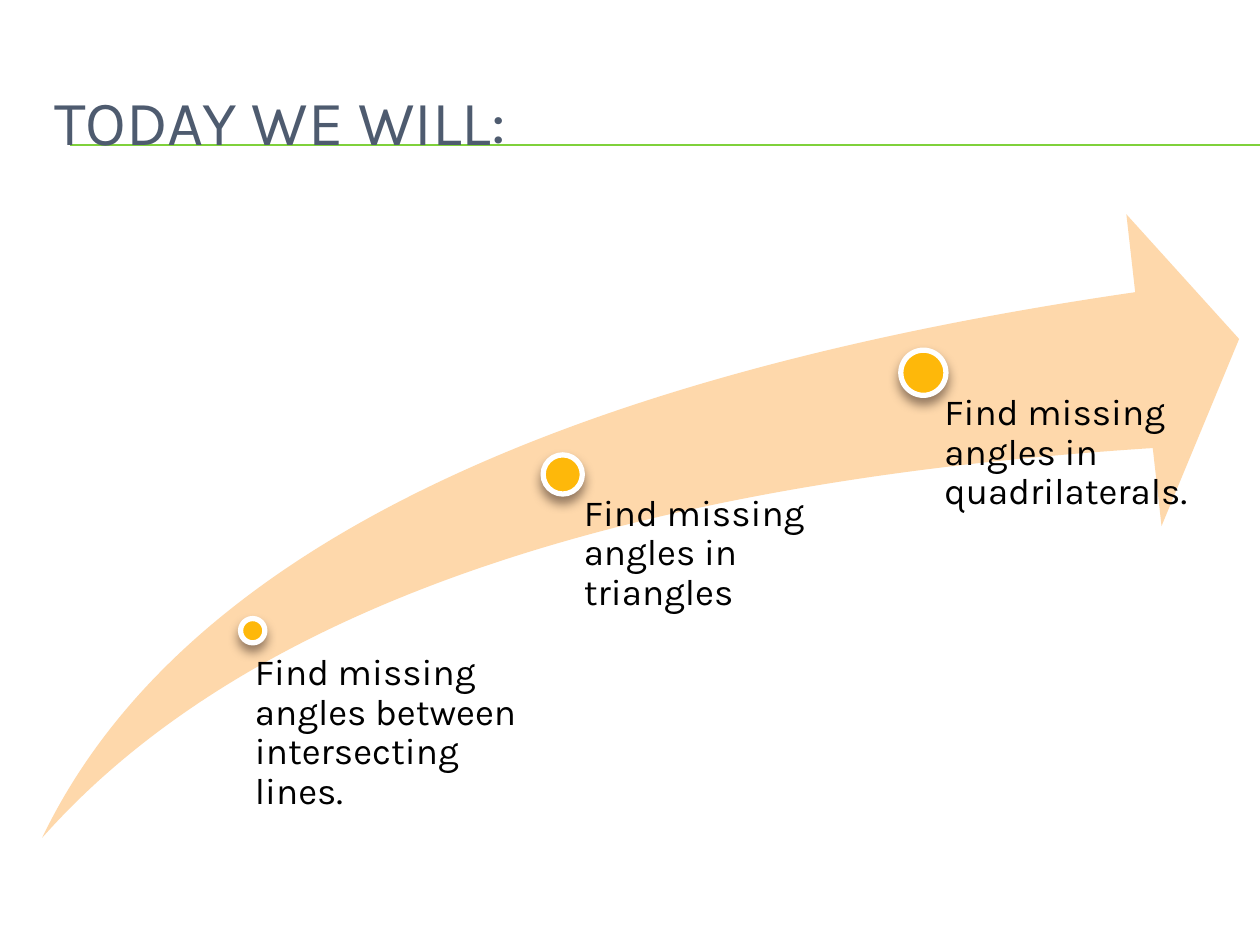
"""Build a lesson goals slide with three steps along a rising arrow."""
from lxml import etree
from pptx import Presentation
from pptx import util as u
from pptx.dml.color import RGBColor
from pptx.enum import shapes, text
from pptx.oxml import parse_xml
from pptx.oxml.ns import nsdecls, qn

SLATE = RGBColor(0x4E, 0x5B, 0x6F)
GREEN = RGBColor(0x7F, 0xD1, 0x3B)
PEACH = RGBColor(0xFE, 0xD8, 0xAB)
AMBER = RGBColor(0xFE, 0xB8, 0x0A)
WHITE = RGBColor(0xFF, 0xFF, 0xFF)
BLACK = RGBColor(0, 0, 0)
BROWN = RGBColor(0x4E, 0x3B, 0x30)

WIDE, HIGH = 25.4, 19.05
TITLE = "TODAY WE WILL:"
RULES = [2.92, 2.94]
STEPS = [
    ("Find missing angles between intersecting lines.",
     (4.73, 12.77, 6.78, 3.15), (4.85, 12.47, 0.49)),
    ("Find missing angles in triangles",
     (11.36, 9.56, 6.05, 3.28), (10.95, 9.17, 0.79)),
    ("Find missing angles in quadrilaterals.",
     (18.63, 7.53, 6.05, 3.28), (18.16, 7.06, 0.91)),
]
SHADE = f"""<a:effectLst {nsdecls("a")}>
<a:outerShdw blurRad="{u.Pt(6)}" dist="{u.Pt(4)}" dir="5400000" rotWithShape="0">
<a:srgbClr val="{BROWN}"><a:alpha val="60000"/></a:srgbClr>
</a:outerShdw></a:effectLst>"""


def write(slide, words, box, size, color, inset=0.25, lead=1.0, after=0,
          anchor=text.MSO_ANCHOR.TOP):
    frame = slide.shapes.add_textbox(*map(u.Cm, box)).text_frame
    frame.word_wrap = True
    frame.vertical_anchor = anchor
    frame.margin_left = frame.margin_right = u.Cm(inset)
    frame.margin_top = frame.margin_bottom = u.Cm(inset)
    para = frame.paragraphs[0]
    para.line_spacing = lead
    para.space_after = u.Pt(after)
    run = para.add_run()
    run.text = words
    run.font.name = "Karla"
    run.font.size = u.Pt(size)
    run.font.color.rgb = color


def draw(slide, kind, box, fill):
    shape = slide.shapes.add_shape(kind, *map(u.Cm, box))
    shape.shadow.inherit = False
    shape.fill.solid()
    shape.fill.fore_color.rgb = fill
    shape.line.fill.background()
    return shape


def rule(slide, y):
    line = slide.shapes.add_connector(
        shapes.MSO_CONNECTOR.STRAIGHT, u.Cm(1.42), u.Cm(y), u.Cm(WIDE), u.Cm(y))
    line.line.color.rgb = GREEN
    line.line.width = u.Pt(0.75)
    etree.SubElement(line._element.spPr, qn("a:effectLst"))


def dot(slide, x, y, size):
    mark = draw(slide, shapes.MSO_SHAPE.OVAL, (x, y, size, size), AMBER)
    mark.line.color.rgb = WHITE
    mark.line.width = u.Pt(3)
    props = mark._element.spPr
    props.replace(props.find(qn("a:effectLst")), parse_xml(SHADE))


def main():
    deck = Presentation()
    deck.slide_width, deck.slide_height = u.Cm(WIDE), u.Cm(HIGH)
    slide = deck.slides.add_slide(deck.slide_layouts[6])
    for y in RULES:
        rule(slide, y)
    write(slide, TITLE, (0.84, 1.26, 24.13, 2.33), 36, SLATE,
          anchor=text.MSO_ANCHOR.MIDDLE)
    draw(slide, shapes.MSO_SHAPE.SWOOSH_ARROW, (0.85, 4.32, 24.13, 12.57), PEACH)
    for words, box, (x, y, size) in STEPS:
        write(slide, words, box, 21, BLACK, inset=0.41, lead=0.9, after=7.35)
        dot(slide, x, y, size)
    deck.save("out.pptx")


if __name__ == "__main__":
    main()
